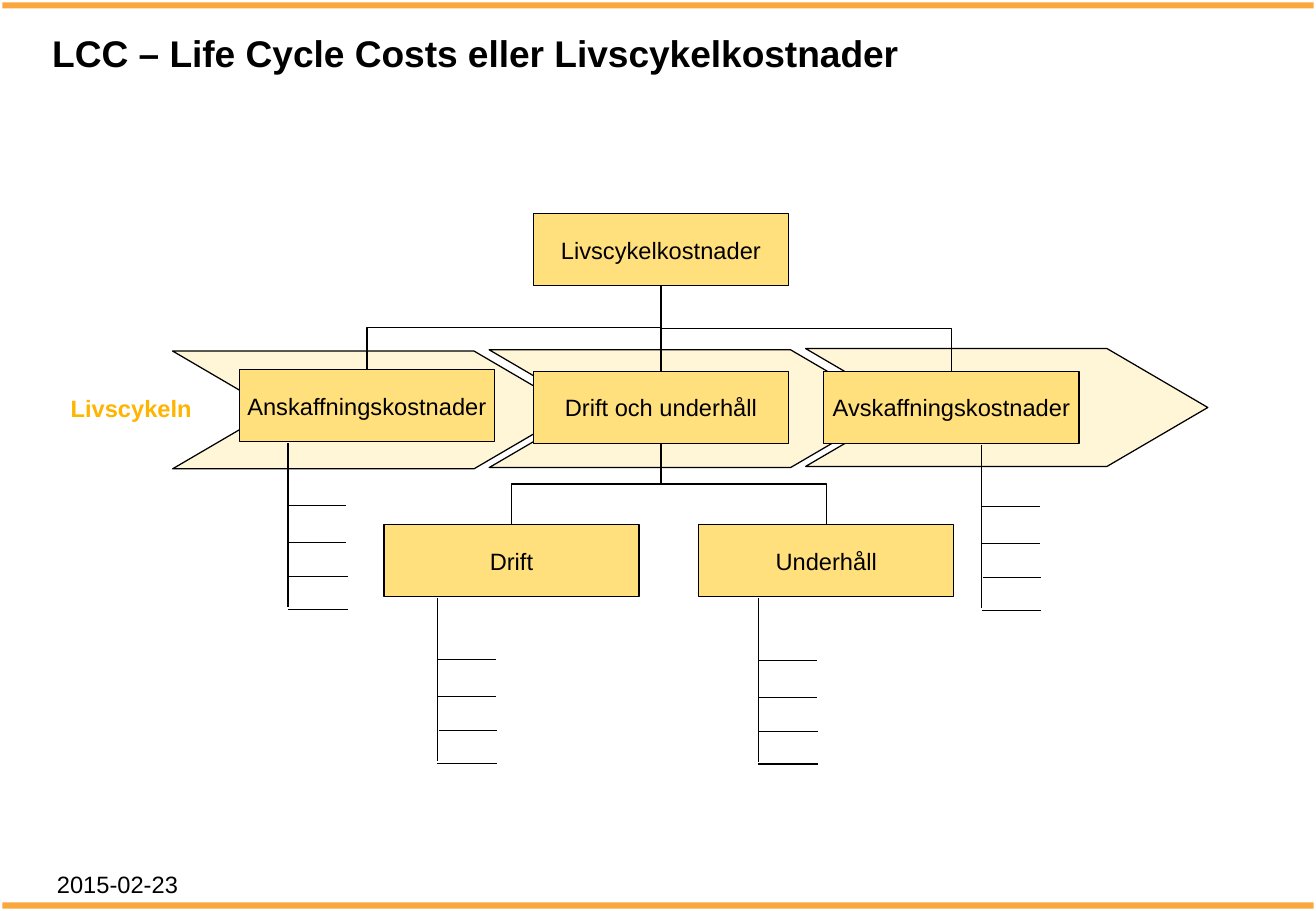
from dataclasses import dataclass

from lxml.etree import SubElement as Sub
from pptx import Presentation
from pptx.dml.color import RGBColor
from pptx.enum.shapes import MSO_CONNECTOR as Link, MSO_SHAPE as Form
from pptx.enum.text import MSO_ANCHOR as Anchor, MSO_AUTO_SIZE as Fit, PP_ALIGN as Align
from pptx.oxml.ns import qn
from pptx.util import Inches, Pt

BLACK = RGBColor(0x00, 0x00, 0x00)
GOLD = RGBColor(0xFF, 0xE0, 0x7D)
AMBER = RGBColor(0xFF, 0xB4, 0x00)
ORANGE = RGBColor(0xFA, 0xA8, 0x3D)
FONT = "Arial"
BOX_W, BOX_H = 21, 5.9


def unit(cells: float) -> int:
    return Inches(cells / 10)


@dataclass
class Area:
    col: float
    row: float
    wide: float
    high: float

    def place(self) -> list:
        return [unit(n) for n in (self.col, self.row, self.wide, self.high)]


@dataclass
class Cost:
    text: str
    col: float
    row: float

    @property
    def mid(self) -> float:
        return self.col + BOX_W / 2


@dataclass
class Label:
    text: str
    area: Area
    size: float = 14
    bold: bool = False
    tint: RGBColor = BLACK
    inset: float = 0.04
    side: float = 0.04
    align: Align = Align.LEFT
    wrap: bool = True
    fit: Fit = Fit.NONE


@dataclass
class Comb:
    col: float
    row: float


@dataclass
class Tooth:
    start: float
    end: float
    drop: float


ROOT = Cost("Livscykelkostnader", 43.9, 17.6)
BUY = Cost("Anskaffningskostnader", 19.7, 30.45)
RUN = Cost("Drift och underhåll", 43.9, 30.6)
SCRAP = Cost("Avskaffningskostnader", 67.8, 30.6)
USE = Cost("Drift", 31.6, 43.2)
CARE = Cost("Underhåll", 57.5, 43.2)
COSTS = [ROOT, BUY, RUN, SCRAP, USE, CARE]
BENDS = [(BUY, ROOT), (SCRAP, ROOT), (USE, RUN), (CARE, RUN)]

BARS = [Area(0.2, row, 107.9, 0.5) for row in (74.3, 0.2)]
STEPS = [Area(14.2 + 26.05 * n, 28.9 - 0.1 * n, 33.1, 9.7) for n in (2, 1, 0)]
COMBS = [Comb(36, 49.2), Comb(62.4, 49.25), Comb(23.7, 36.5), Comb(80.8, 36.6)]
SPINE = 13.45
TEETH = [Tooth(0, 4.8, 5.1), Tooth(0, 4.8, 8.15), Tooth(0.1, 4.9, 10.95), Tooth(0, 4.9, 13.65)]
LABELS = [
    Label("LCC – Life Cycle Costs eller Livscykelkostnader", Area(3.7, 2.1, 103.3, 8.8),
          size=22, bold=True, side=0.06),
    Label("2015-02-23", Area(3.7, 71.1, 30.1, 3.4), inset=0.05, side=0.1, fit=Fit.SHAPE_TO_FIT_TEXT),
    Label("Livscykeln", Area(5.4, 32, 10.8, 3.2), bold=True, tint=AMBER,
          align=Align.CENTER, wrap=False, fit=Fit.SHAPE_TO_FIT_TEXT),
]


def write(shape, label: Label) -> None:
    frame = shape.text_frame
    frame.auto_size = label.fit
    frame.word_wrap = label.wrap
    frame.margin_top = frame.margin_bottom = Inches(label.inset)
    frame.margin_left = frame.margin_right = Inches(label.side)
    para = frame.paragraphs[0]
    para.alignment = label.align
    run = para.add_run()
    run.text = label.text
    run.font.name = FONT
    run.font.size = Pt(label.size)
    run.font.bold = label.bold
    run.font.color.rgb = label.tint


def draw_form(shapes, form: Form, area: Area, fill: RGBColor, edge: bool = True):
    shape = shapes.add_shape(form, *area.place())
    shape.shadow.inherit = False
    shape.fill.solid()
    shape.fill.fore_color.rgb = fill
    if edge:
        shape.line.color.rgb = BLACK
        shape.line.width = Pt(0.75)
    else:
        shape.line.fill.background()
    return shape


def draw_line(shapes, ends: tuple, kind: Link = Link.STRAIGHT):
    line = shapes.add_connector(kind, *[unit(n) for n in ends])
    line.line.color.rgb = BLACK
    line.line.width = Pt(0.75)
    Sub(line._element.spPr, qn("a:effectLst"))
    return line


def draw_step(shapes, area: Area) -> None:
    step = draw_form(shapes, Form.CHEVRON, area, GOLD)
    step.adjustments[0] = 0.855
    tone = step._element.spPr.find(qn("a:solidFill")).find(qn("a:srgbClr"))
    Sub(tone, qn("a:alpha"), val="30000")


def draw_cost(shapes, cost: Cost):
    area = Area(cost.col, cost.row, BOX_W, BOX_H)
    box = draw_form(shapes, Form.RECTANGLE, area, GOLD)
    box.text_frame.vertical_anchor = Anchor.MIDDLE
    write(box, Label(cost.text, area, align=Align.CENTER, wrap=False))
    return box


def draw_bend(shapes, child: Cost, head: Cost) -> None:
    base = head.row + BOX_H
    x, y = (child.mid + head.mid) / 2, (child.row + base) / 2
    half = (child.row - base) / 2
    span = abs(head.mid - child.mid) / 2
    left = child.mid < head.mid
    turn = half if left else -half
    bend = draw_line(shapes, (x - turn, y - span, x + turn, y + span), Link.ELBOW)
    bend._element.spPr.find(qn("a:xfrm")).set("rot", str((270 if left else 90) * 60000))


def draw_comb(shapes, comb: Comb) -> None:
    group = shapes.add_group_shape().shapes
    draw_line(group, (comb.col, comb.row, comb.col, comb.row + SPINE))
    for tooth in TEETH:
        row = comb.row + tooth.drop
        draw_line(group, (comb.col + tooth.start, row, comb.col + tooth.end, row))


def main() -> None:
    deck = Presentation()
    deck.slide_width, deck.slide_height = Inches(10.83), Inches(7.5)
    shapes = deck.slides.add_slide(deck.slide_layouts[6]).shapes
    for bar in BARS:
        draw_form(shapes, Form.RECTANGLE, bar, ORANGE, edge=False)
    for step in STEPS:
        draw_step(shapes, step)
    boxes = {cost.text: draw_cost(shapes, cost) for cost in COSTS}
    for child, head in BENDS:
        draw_bend(shapes, child, head)
    stem = draw_line(shapes, (RUN.mid, RUN.row, ROOT.mid, ROOT.row + BOX_H))
    stem.begin_connect(boxes[RUN.text], 0)
    stem.end_connect(boxes[ROOT.text], 2)
    for label in LABELS:
        write(shapes.add_textbox(*label.area.place()), label)
    for comb in COMBS:
        draw_comb(shapes, comb)
    deck.save("out.pptx")


if __name__ == "__main__":
    main()
